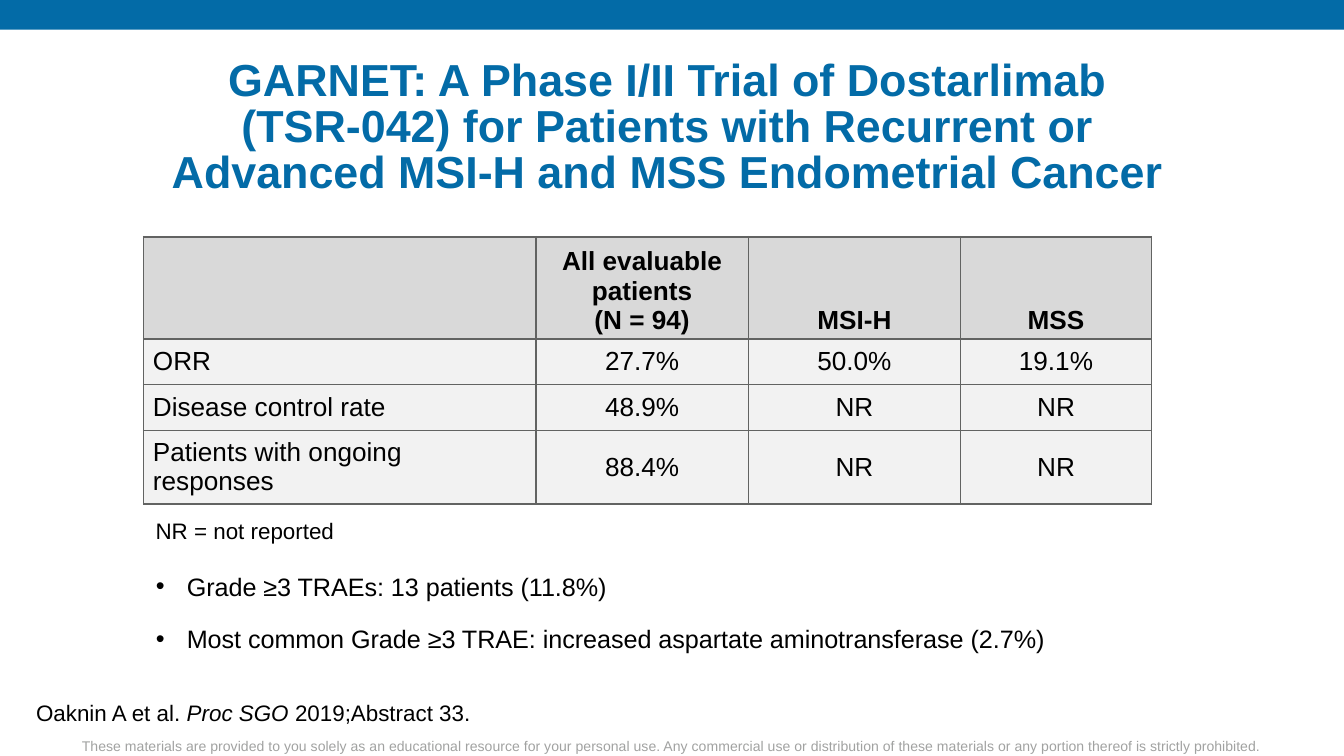
from dataclasses import dataclass

from lxml.etree import SubElement
from pptx import Presentation
from pptx.dml.color import RGBColor
from pptx.enum.shapes import MSO_SHAPE
from pptx.enum.text import MSO_ANCHOR, MSO_AUTO_SIZE, PP_ALIGN
from pptx.oxml import parse_xml
from pptx.oxml.ns import nsdecls, qn
from pptx.util import Inches, Pt


@dataclass(frozen=True)
class Theme:
    """Colours and type sizes of the slide."""
    font: str = "Arial"
    accent: str = "036BA7"
    ink: str = "000000"
    muted: str = "A1A2A1"
    header: str = "D9D9D9"
    cell: str = "F2F2F2"
    border: str = "626362"
    title_size: float = 24
    table_size: float = 14
    bullet_size: float = 13.5
    note_size: float = 12
    legal_size: float = 7.5


class SlideBuilder:
    """Draws styled elements on a square grid, 100 columns wide."""

    def __init__(self, deck, theme):
        """Add the slide and set the grid unit."""
        self.theme = theme
        self.unit = deck.slide_width / 100
        self.slide = deck.slides.add_slide(deck.slide_layouts[1])
        self.shapes = self.slide.shapes

    def grid(self, *cells):
        """Turn grid cells into slide lengths."""
        return [round(cell * self.unit) for cell in cells]

    def move(self, holder, area):
        """Place a shape on an area of the grid."""
        holder.left, holder.top, holder.width, holder.height = self.grid(*area)

    def run(self, paragraph, text, size, color=None, bold=False, italic=False):
        """Add one styled run."""
        run = paragraph.add_run()
        run.text = text
        font = run.font
        font.name, font.size = self.theme.font, Pt(size)
        font.bold, font.italic = bold, italic
        font.color.rgb = RGBColor.from_string(color or self.theme.ink)

    def band(self, area):
        """Draw a plain accent band."""
        band = self.shapes.add_shape(MSO_SHAPE.RECTANGLE, *self.grid(*area))
        band.shadow.inherit = False
        band.fill.solid()
        band.fill.fore_color.rgb = RGBColor.from_string(self.theme.accent)
        band.line.fill.background()

    def title(self, area, lines):
        """Fill the title placeholder line by line."""
        title = self.shapes.title
        self.move(title, area)
        frame = title.text_frame
        frame.auto_size = MSO_AUTO_SIZE.NONE
        frame.vertical_anchor = MSO_ANCHOR.MIDDLE
        paragraph = frame.paragraphs[0]
        paragraph.alignment = PP_ALIGN.CENTER
        paragraph.line_spacing = 0.85
        for index, line in enumerate(lines):
            if index:
                paragraph.add_line_break()
            self.run(paragraph, line, self.theme.title_size, self.theme.accent, bold=True)

    def bullets(self, area, items):
        """Fill the body placeholder with a bulleted list."""
        body = self.slide.placeholders[1]
        self.move(body, area)
        frame = body.text_frame
        frame.auto_size = MSO_AUTO_SIZE.NONE
        frame.vertical_anchor = MSO_ANCHOR.TOP
        for index, item in enumerate(items):
            paragraph = frame.add_paragraph() if index else frame.paragraphs[0]
            paragraph.space_before = Pt(12 if index else 0)
            properties = paragraph._p.get_or_add_pPr()
            indent = Inches(0.23)
            properties.set("marL", str(indent))
            properties.set("indent", str(-indent))
            SubElement(properties, qn("a:buChar"), char="•")
            self.run(paragraph, item, self.theme.bullet_size)

    def note(self, area, parts, size, color=None, align=PP_ALIGN.LEFT, wrap=False):
        """Add a text box from (text, italic) parts."""
        frame = self.shapes.add_textbox(*self.grid(*area)).text_frame
        frame.word_wrap = wrap
        frame.auto_size = MSO_AUTO_SIZE.SHAPE_TO_FIT_TEXT
        paragraph = frame.paragraphs[0]
        paragraph.alignment = align
        for text, italic in parts:
            self.run(paragraph, text, size, color, italic=italic)

    def outline(self, cell):
        """Draw the four borders of a table cell."""
        properties = cell._tc.get_or_add_tcPr()
        for index, side in enumerate("LRTB"):
            properties.insert(index, parse_xml(
                f'<a:ln{side} {nsdecls("a")} w="{Pt(1)}"><a:solidFill>'
                f'<a:srgbClr val="{self.theme.border}"/></a:solidFill></a:ln{side}>'))

    def cell(self, cell, text, is_header, is_label):
        """Style and fill one table cell."""
        cell.fill.solid()
        fill = self.theme.header if is_header else self.theme.cell
        cell.fill.fore_color.rgb = RGBColor.from_string(fill)
        self.outline(cell)
        cell.vertical_anchor = MSO_ANCHOR.BOTTOM if is_header else MSO_ANCHOR.MIDDLE
        cell.margin_left = cell.margin_right = Inches(0.06 if is_header else 0.07)
        cell.margin_top = cell.margin_bottom = Inches(0.03 if is_header else 0.04)
        for index, line in enumerate(text.splitlines()):
            frame = cell.text_frame
            paragraph = frame.add_paragraph() if index else frame.paragraphs[0]
            paragraph.alignment = PP_ALIGN.LEFT if is_label else PP_ALIGN.CENTER
            self.run(paragraph, line, self.theme.table_size, bold=is_header)

    def table(self, area, widths, heights, rows):
        """Add a table with a header row and a label column."""
        table = self.shapes.add_table(len(rows), len(widths), *self.grid(*area)).table
        table.first_row = table.horz_banding = False
        for column, width in zip(table.columns, self.grid(*widths)):
            column.width = width
        for row, height in zip(table.rows, self.grid(*heights)):
            row.height = height
        for r, values in enumerate(rows):
            for c, text in enumerate(values):
                self.cell(table.cell(r, c), text, r == 0, c == 0)


def main():
    """Build and save the slide."""
    deck = Presentation()
    deck.slide_width = Inches(10)
    deck.slide_height = deck.slide_width * 9 // 16
    theme = Theme()
    page = SlideBuilder(deck, theme)
    page.band((0, 0, 100, 2.2))
    page.note((2.5, 54.4, 94.9, 2.3), [(
        "These materials are provided to you solely as an educational resource for your "
        "personal use. Any commercial use or distribution of these materials or any "
        "portion thereof is strictly prohibited.", False)],
        theme.legal_size, theme.muted, PP_ALIGN.CENTER, wrap=True)
    page.title((5.1, 4.15, 90, 10.9), [
        "GARNET: A Phase I/II Trial of Dostarlimab ",
        "(TSR-042) for Patients with Recurrent or ",
        "Advanced MSI-H and MSS Endometrial Cancer ",
    ])
    page.table((10.68, 17.62, 75, 17.5), (29.2, 15.8, 15.8, 14.2), (7.3, 3.4, 3.4, 3.4), [
        ("", "All evaluable patients\n(N = 94)", "MSI-H", "MSS"),
        ("ORR", "27.7%", "50.0%", "19.1%"),
        ("Disease control rate", "48.9%", "NR", "NR"),
        ("Patients with ongoing responses", "88.4%", "NR", "NR"),
    ])
    page.note((10.6, 38, 15.4, 3), [("NR = not reported", False)], theme.note_size)
    page.bullets((10.6, 42, 72.1, 7.2), [
        "Grade ≥3 TRAEs: 13 patients (11.8%)",
        "Most common Grade ≥3 TRAE: increased aspartate aminotransferase (2.7%)",
    ])
    page.note((1.7, 51.5, 34.7, 3), [
        ("Oaknin A et al. ", False), ("Proc SGO ", True), ("2019;Abstract 33.", False),
    ], theme.note_size)
    deck.save("out.pptx")


if __name__ == "__main__":
    main()
